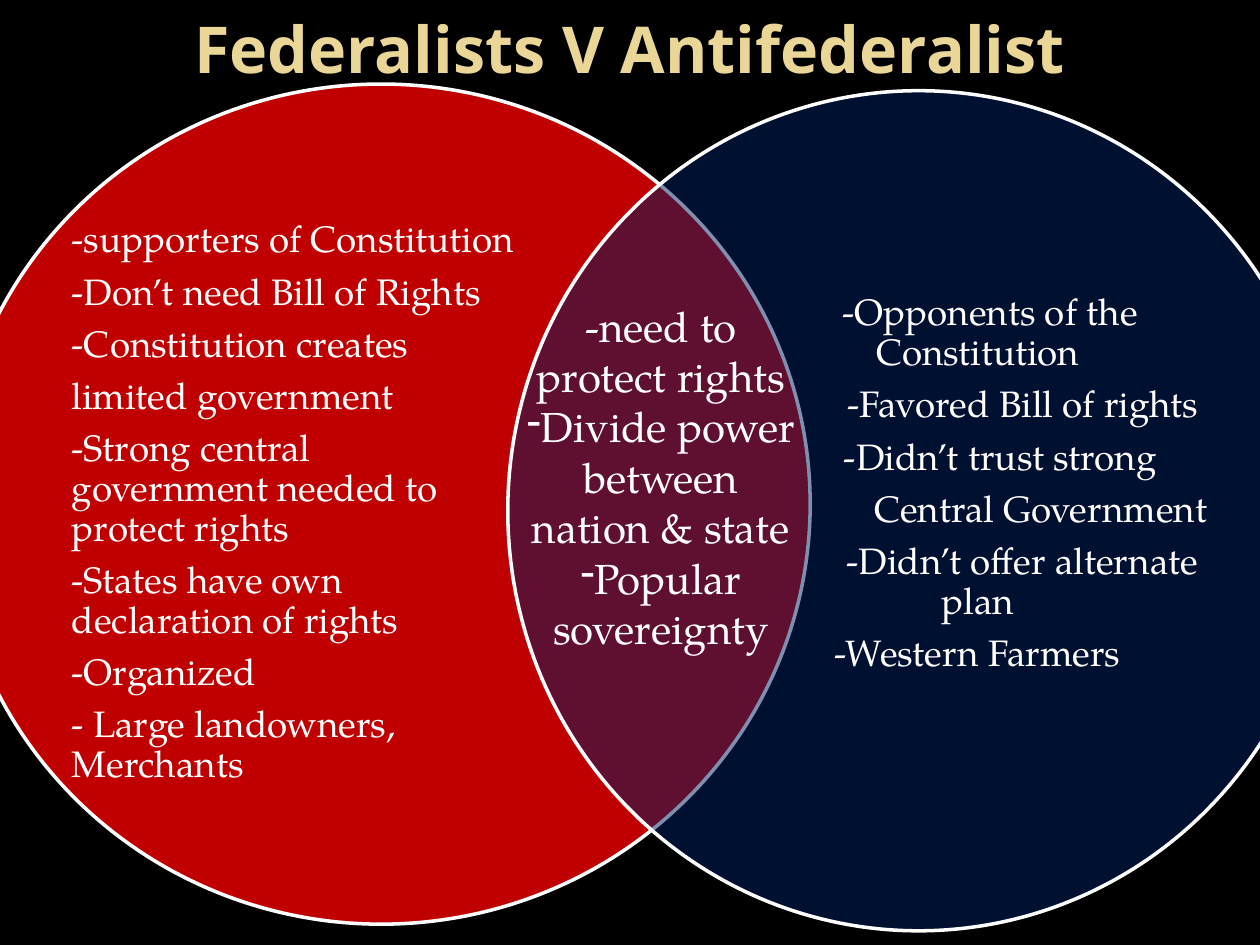
from pptx import Presentation
from pptx.dml.color import RGBColor
from pptx.enum.shapes import MSO_SHAPE
from pptx.enum.text import MSO_ANCHOR, PP_ALIGN
from pptx.oxml.ns import qn
from pptx.util import Inches, Pt
from lxml import etree

OVAL = MSO_SHAPE.OVAL
TOP, MID = MSO_ANCHOR.TOP, MSO_ANCHOR.MIDDLE
LEFT, MIDST = PP_ALIGN.LEFT, PP_ALIGN.CENTER
HEAD, BODY = "Open Sans", "TeX Gyre Pagella"
HUE = {"back": "000000", "gold": "EAD696", "red": "C00000",
       "navy": "002060", "white": "FFFFFF"}

deck = Presentation()
deck.slide_width, deck.slide_height = Inches(10), Inches(7.5)
W, H = deck.slide_width, deck.slide_height
page = deck.slides.add_slide(deck.slide_layouts[6])
page.background.fill.solid()
page.background.fill.fore_color.rgb = RGBColor.from_string(HUE["back"])


def place(box):
    """Turn shares of the slide, in percent, into lengths."""
    return [int(part * side / 100) for part, side in zip(box, (W, H, W, H))]


def write(box, lines, size, font=BODY, hue="white", bold=False, align=MIDST,
          anchor=MID, pad=(0, 0, 0, 0), space=1.0, after=0):
    """Write lines of (text, first-line indent in inches, bullet)."""
    frame = page.shapes.add_textbox(*place(box)).text_frame
    frame.word_wrap = True
    frame.vertical_anchor = anchor
    (frame.margin_left, frame.margin_top,
     frame.margin_right, frame.margin_bottom) = map(Inches, pad)
    for num, (text, dent, mark) in enumerate(lines):
        para = frame.add_paragraph() if num else frame.paragraphs[0]
        para.text = text
        para.alignment, para.line_spacing = align, space
        para.space_after = Pt(after)
        props = para._p.get_or_add_pPr()
        props.set("marL", "0")
        props.set("indent", str(Inches(dent)))
        if mark:
            etree.SubElement(props, qn("a:buChar")).set("char", mark)
        for run in para.runs:
            run.font.size, run.font.name, run.font.bold = Pt(size), font, bold
            run.font.color.rgb = RGBColor.from_string(HUE[hue])


# Title
write((5, 0, 90, 10), [("Federalists V Antifederalist", 0, "")], 36.9,
      font=HEAD, hue="gold", bold=True)

# Venn circles, the right one half clear
for box, hue, alpha in (((-3.8, 8.9, 68.1, 88.9), "red", 100),
                        ((40.3, 9.6, 65.2, 88.9), "navy", 50)):
    ring = page.shapes.add_shape(OVAL, *place(box))
    ring.shadow.inherit = False
    ring.fill.solid()
    ring.fill.fore_color.rgb = RGBColor.from_string(HUE[hue])
    ring.line.color.rgb = RGBColor.from_string(HUE["white"])
    ring.line.width = Pt(2)
    if alpha < 100:
        tint = ring.fill._xPr.find(qn("a:solidFill"))[0]
        etree.SubElement(tint, qn("a:alpha")).set("val", str(alpha * 1000))

# Federalists
left = ["-supporters of Constitution", "-Don’t need Bill of Rights",
        "-Constitution creates", "limited government",
        "-Strong central\vgovernment needed to\vprotect rights",
        "-States have own\vdeclaration of rights", "-Organized",
        "- Large landowners, Merchants"]
write((5.7, 19.3, 39.3, 67.9), [(text, 0, "") for text in left], 21,
      align=LEFT, space=0.9, after=7.2)

# Antifederalists
right = [("-Opponents of the Constitution", 0.2, ""),
         ("-Favored Bill of rights", 0.72, ""),
         ("-Didn’t trust strong", 0.36, ""),
         ("Central Government", 1, ""),
         ("-Didn’t offer alternate plan", 0.71, ""),
         ("-Western Farmers", 0, "")]
write((58.8, 20.1, 37.6, 67.9), right, 21, pad=(0, 0, 0, 0.42),
      space=0.9, after=7.2)

# Shared views
both = [("-need to protect rights", 0, ""),
        ("Divide power between nation & state", 0, "-"),
        ("Popular sovereignty", 0, "-")]
write((40.8, 31.1, 23.3, 48.5), both, 24, anchor=TOP,
      pad=(0.1, 0.05, 0.1, 0.05))

deck.save("out.pptx")
